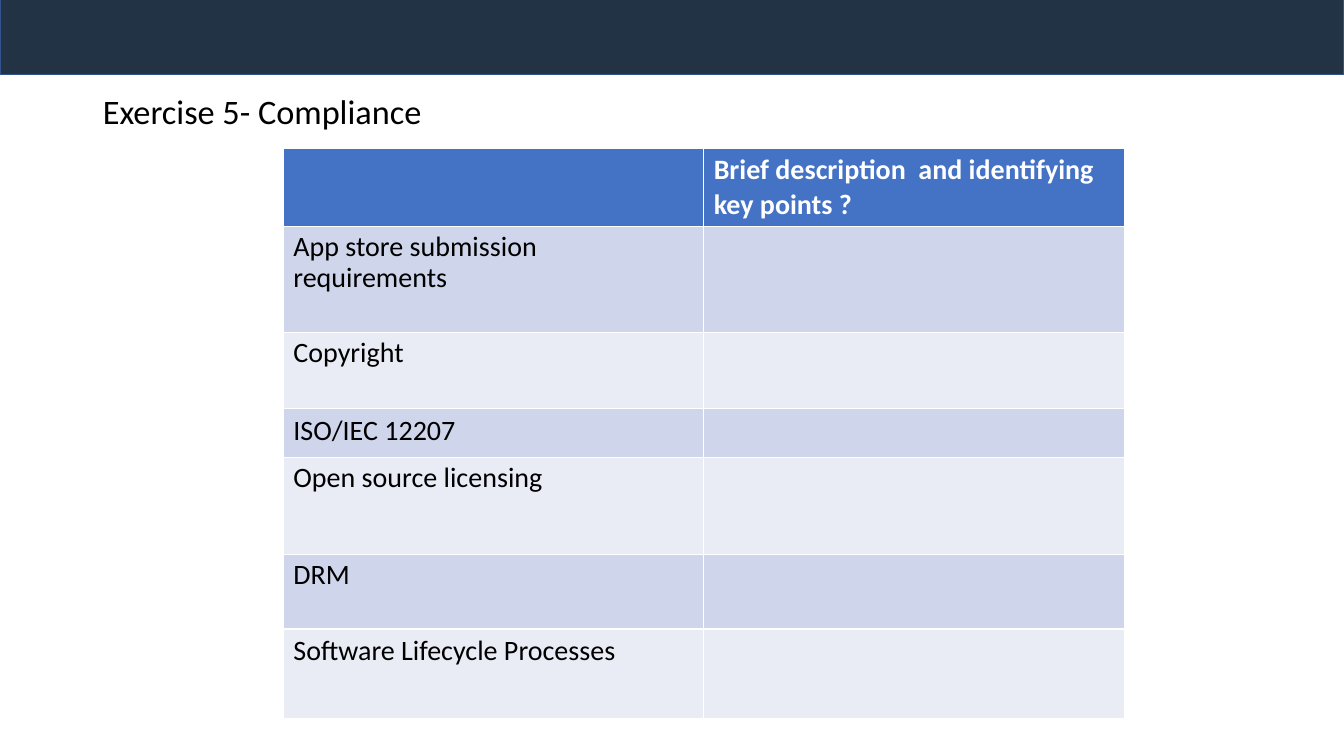
import pptx
import pptx.util
import pptx.dml.color
import pptx.enum.shapes
import pptx.enum.text

Inches, Pt = pptx.util.Inches, pptx.util.Pt
RGBColor = pptx.dml.color.RGBColor

TITLE = "Exercise 5- Compliance"
HEADING = "Brief description  and identifying key points ?"
HEADING_HEIGHT = 0.77
# topic, row height in inches, line spacing
TOPICS = [
    ("App store submission requirements", 1.05, 0.9),
    ("Copyright", 0.75, 0.9),
    ("ISO/IEC 12207", 0.49, 1.0),
    ("Open source licensing", 0.96, 0.9),
    ("DRM", 0.74, 0.9),
    ("Software Lifecycle Processes", 0.89, 1.0),
]

FONT = "Calibri"
NAVY = RGBColor(0x22, 0x33, 0x46)
BAR_EDGE = RGBColor(0x32, 0x54, 0x91)
HEADING_BLUE = RGBColor(0x44, 0x72, 0xC4)
BANDS = [RGBColor(0xCF, 0xD5, 0xEA), RGBColor(0xE9, 0xEB, 0xF5)]
BLACK = RGBColor(0, 0, 0)
WHITE = RGBColor(0xFF, 0xFF, 0xFF)


def format_text(paragraph, size, color, bold=False, spacing=1.0):
    paragraph.line_spacing = spacing
    for run in paragraph.runs:
        run.font.name = FONT
        run.font.size = Pt(size)
        run.font.bold = bold
        run.font.color.rgb = color


def fill_row(row, height, color):
    row.height = Inches(height)
    for cell in row.cells:
        cell.fill.solid()
        cell.fill.fore_color.rgb = color


def main():
    prs = pptx.Presentation()
    prs.slide_width, prs.slide_height = Inches(13.33), Inches(7.5)
    slide = prs.slides.add_slide(prs.slide_layouts[5])

    title = slide.shapes.title
    title.left, title.top = Inches(0.92), Inches(0.4)
    title.width, title.height = Inches(11.5), Inches(1.45)
    title.text_frame.text = TITLE
    title.text_frame.vertical_anchor = pptx.enum.text.MSO_ANCHOR.MIDDLE
    heading = title.text_frame.paragraphs[0]
    heading.alignment = pptx.enum.text.PP_ALIGN.LEFT
    format_text(heading, 24.5, BLACK, spacing=0.9)

    top_bar = slide.shapes.add_shape(
        pptx.enum.shapes.MSO_SHAPE.RECTANGLE,
        0, Inches(-0.04), prs.slide_width, Inches(0.78))
    top_bar.shadow.inherit = False
    top_bar.fill.solid()
    top_bar.fill.fore_color.rgb = NAVY
    top_bar.line.color.rgb = BAR_EDGE
    top_bar.line.width = Pt(1)

    table_height = HEADING_HEIGHT + sum(height for _, height, _ in TOPICS)
    compliance = slide.shapes.add_table(
        len(TOPICS) + 1, 2, Inches(2.81), Inches(1.47),
        Inches(8.34), Inches(table_height)).table

    fill_row(compliance.rows[0], HEADING_HEIGHT, HEADING_BLUE)
    description = compliance.cell(0, 1)
    description.text_frame.text = HEADING
    format_text(description.text_frame.paragraphs[0], 20, WHITE, bold=True)

    for index, (topic, height, spacing) in enumerate(TOPICS):
        row = compliance.rows[index + 1]
        fill_row(row, height, BANDS[index % 2])
        topic_text = row.cells[0].text_frame
        topic_text.text = topic
        format_text(topic_text.paragraphs[0], 20, BLACK, spacing=spacing)

    prs.save("out.pptx")


if __name__ == "__main__":
    main()
